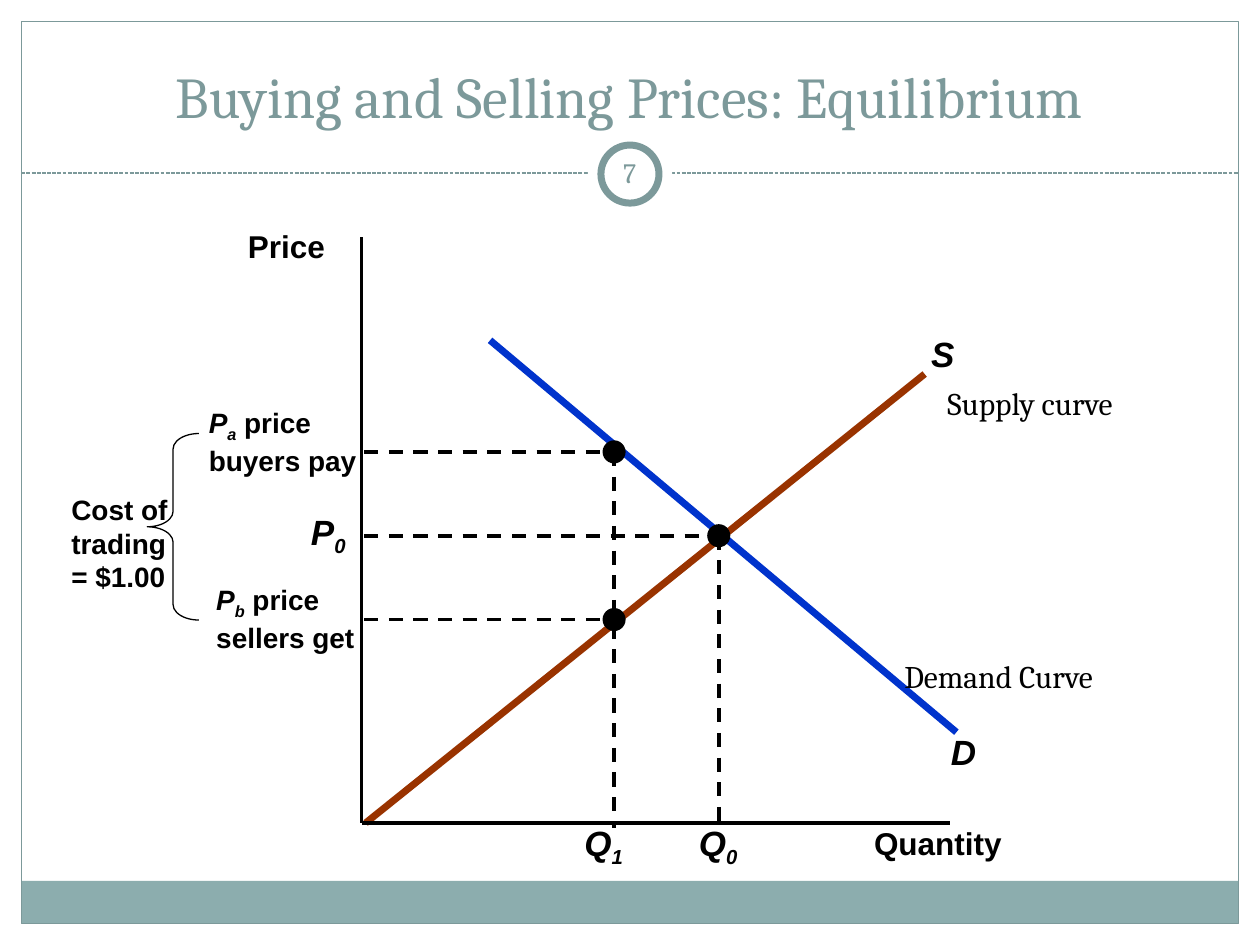
from collections import namedtuple

from lxml.etree import SubElement
from pptx import Presentation
from pptx.dml.color import RGBColor
from pptx.enum.dml import MSO_LINE
from pptx.enum.shapes import MSO_CONNECTOR, MSO_SHAPE
from pptx.enum.text import MSO_ANCHOR, MSO_AUTO_SIZE, PP_ALIGN
from pptx.oxml.ns import qn
from pptx.util import Cm, Pt

Box = namedtuple("Box", "x y w h")


class Theme:
    white, black = "FFFFFF", "000000"
    accent, band = "7C999A", "8CADAE"
    supply, demand = "993300", "0033CC"
    label = dict(name="Arial", size=Pt(16), bold=True)
    label_var = dict(label, italic=True)
    axis = dict(label, size=Pt(18))
    var = dict(label_var, size=Pt(20))
    curve = dict(name="Cambria", size=Pt(18))
    title = dict(name="Cambria", size=Pt(33))
    number = dict(name="Cambria", size=Pt(16))


def rgb(color):
    return RGBColor.from_string(color)


def apply(obj, values):
    for key, value in values.items():
        setattr(obj, key, value)


def place(box, x, y, w, h):
    return Cm(box.x + x), Cm(box.y + y), Cm(w), Cm(h)


def add_run(p, text, fmt, color=Theme.black, sub=False):
    r = p.add_run()
    r.text = text
    apply(r.font, fmt)
    r.font.color.rgb = rgb(color)
    if sub:
        r._r.get_or_add_rPr().set("baseline", "-25000")


def add_text(slide, box, at, runs, wrap=False):
    tf = slide.shapes.add_textbox(*place(box, *at)).text_frame
    apply(tf, dict(word_wrap=wrap, auto_size=MSO_AUTO_SIZE.SHAPE_TO_FIT_TEXT))
    for run in runs:
        add_run(tf.paragraphs[0], *run)
    return tf


def add_shape(slide, box, kind, at, fill=None, line=None, width=0.75):
    sp = slide.shapes.add_shape(kind, *place(box, *at))
    sp.shadow.inherit = False
    if fill:
        sp.fill.solid()
        sp.fill.fore_color.rgb = rgb(fill)
    else:
        sp.fill.background()
    if line:
        sp.line.color.rgb = rgb(line)
        sp.line.width = Pt(width)
    else:
        sp.line.fill.background()
    return sp


def add_line(slide, box, start, end, color=Theme.black, width=2, dash=None):
    points = [Cm(o + v) for pt in (start, end) for o, v in zip(box, pt)]
    cxn = slide.shapes.add_connector(MSO_CONNECTOR.STRAIGHT, *points)
    apply(cxn.line, dict(width=Pt(width), dash_style=dash))
    cxn.line.color.rgb = rgb(color)
    SubElement(cxn._element.spPr, qn("a:effectLst"))


def add_frame(slide, box, number):
    band_h, rule_y, mid = 0.86, 3.06, box.w / 2
    add_shape(slide, box, MSO_SHAPE.RECTANGLE, (0, box.h - band_h, box.w, band_h), Theme.band)
    add_shape(slide, box, MSO_SHAPE.RECTANGLE, (0, 0, box.w, box.h), None, Theme.accent)
    add_line(slide, box, (0, rule_y), (box.w, rule_y), Theme.accent, 0.75, MSO_LINE.SQUARE_DOT)
    for d, line in ((1.7, None), (1.17, Theme.accent)):
        at = (mid - d / 2, rule_y + 0.02 - d / 2, d, d)
        add_shape(slide, box, MSO_SHAPE.OVAL, at, Theme.white, line, 4)
    tf = add_text(slide, box, (mid - 0.64, 2.44, 1.27, 1.22),
                  [(number, Theme.number, Theme.accent)], wrap=True)
    inset = Cm(0.13)
    apply(tf, dict(auto_size=MSO_AUTO_SIZE.NONE, vertical_anchor=MSO_ANCHOR.MIDDLE,
                   margin_left=inset, margin_right=inset))
    tf.paragraphs[0].alignment = PP_ALIGN.CENTER


def add_title(slide, box, text):
    sp = slide.shapes.title
    apply(sp, dict(zip(("left", "top", "width", "height"), map(Cm, box))))
    tf = sp.text_frame
    apply(tf, dict(auto_size=MSO_AUTO_SIZE.NONE, vertical_anchor=MSO_ANCHOR.BOTTOM))
    p = tf.paragraphs[0]
    p.alignment = PP_ALIGN.CENTER
    add_run(p, text, Theme.title, Theme.accent)


def add_graph(slide, box):
    q1, q0 = 5.09, 7.2
    pa, p0, pb = 4.33, 6.02, 7.71
    dot = 0.43
    add_line(slide, box, (0.08, box.h), (11.35, 2.76), Theme.supply, 4)
    add_line(slide, box, (2.59, 2.08), (11.99, 9.98), Theme.demand, 4)
    add_line(slide, box, (0, 0), (0, box.h))
    add_line(slide, box, (0, box.h), (box.w, box.h))
    for q, p in ((q1, pa), (q0, p0), (q1, pb)):
        add_line(slide, box, (0.05, p), (q - dot / 2, p), dash=MSO_LINE.DASH)
        add_shape(slide, box, MSO_SHAPE.OVAL, (q - dot / 2, p - dot / 2, dot, dot),
                  Theme.black, Theme.black, 1)
    for q, top in ((q1, pa), (q0, p0)):
        add_line(slide, box, (q, top), (q, box.h + 0.1), dash=MSO_LINE.DASH)

    for at, text, fmt in (
        ((11.63, 9.83, 1.02, 1.09), "D", Theme.var),
        ((11.23, 1.8, 0.97, 1.09), "S", Theme.var),
        ((10.08, 11.7, 3.5, 1.02), "Quantity", Theme.axis),
        ((-2.54, -0.33, 2.3, 1.02), "Price", Theme.axis),
        ((11.56, 2.84, 4.45, 1.02), "Supply curve", Theme.curve),
        ((10.69, 8.35, 5.28, 1.02), "Demand Curve", Theme.curve),
    ):
        add_text(slide, box, at, [(text, fmt)], wrap=len(text) > 1)

    for at, name, index, rest in (
        ((-1.27, 5.38, 1.22, 1.09), "P", "0", ""),
        ((6.55, 11.65, 1.3, 1.09), "Q", "0", ""),
        ((4.24, 11.65, 1.3, 1.09), "Q", "1", ""),
        ((-3.33, 3.27, 4.27, 1.6), "P", "a", " price buyers pay"),
        ((-3.18, 6.83, 3.4, 1.63), "P", "b", " price sellers get"),
    ):
        fmt = Theme.label_var if rest else Theme.var
        runs = [(name, fmt), (index, fmt, Theme.black, True)]
        if rest:
            runs.append((rest, Theme.label))
        add_text(slide, box, at, runs, wrap=bool(rest))


def add_cost(slide, box):
    brace_w = 1.04
    sp = add_shape(slide, box, MSO_SHAPE.LEFT_BRACE,
                   (box.w - brace_w, 0, brace_w, box.h), None, Theme.black)
    sp.adjustments[0] = 0.3
    add_text(slide, box, (0, 1.07, 2.62, 2.31),
             [("Cost of trading = $1.00", Theme.label)], wrap=True)


def main():
    prs = Presentation()
    apply(prs, dict(slide_width=Cm(25.4), slide_height=Cm(19.05)))
    slide = prs.slides.add_slide(prs.slide_layouts[5])
    add_frame(slide, Box(0.43, 0.43, 24.54, 18.19), "7")
    add_title(slide, Box(0.84, 0.64, 23.7, 2.11), "Buying and Selling Prices: Equilibrium")
    add_graph(slide, Box(7.29, 4.78, 11.86, 11.81))
    add_cost(slide, Box(1.19, 8.74, 2.82, 3.76))
    prs.save("out.pptx")


if __name__ == "__main__":
    main()
